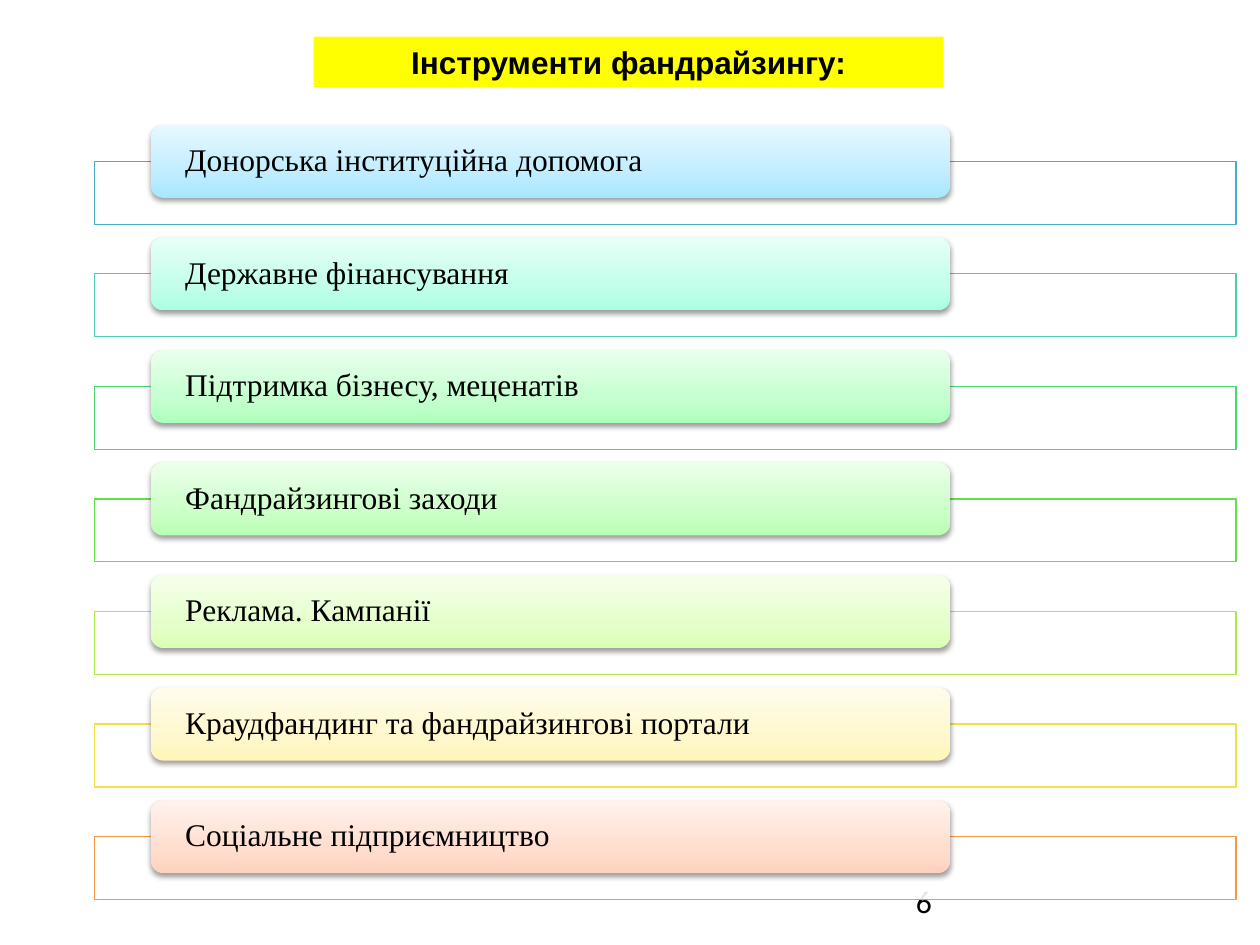
from copy import deepcopy
from dataclasses import dataclass

from lxml.etree import SubElement
from pptx import Presentation
from pptx.dml.color import RGBColor
from pptx.enum.shapes import MSO_SHAPE
from pptx.enum.text import MSO_ANCHOR, MSO_AUTO_SIZE, PP_ALIGN
from pptx.oxml.ns import qn
from pptx.util import Inches, Pt


@dataclass(frozen=True)
class Theme:
    text: str = "000000"
    frame: str = "FFFFFF"
    title_fill: str = "FFFF00"
    title_font: str = "Arial"
    label_font: str = "Times New Roman"
    number_font: str = "Calibri"
    size: int = 18


# Label, frame line, gradient from bottom to top
TOOLS = [
    ("Донорська інституційна допомога", "4BACC6", ("A7E6FF", "C1EDFF", "E7F8FF")),
    ("Державне фінансування", "49CFAE", ("ABFFE3", "C3FFEA", "E8FFF7")),
    ("Підтримка бізнесу, меценатів", "47D872", ("AFFFBD", "C6FFD0", "E9FFED")),
    ("Фандрайзингові заходи", "60E146", ("B9FFB2", "CDFFC9", "ECFFEA")),
    ("Реклама. Кампанії", "ACE946", ("DBFFB6", "E5FFCB", "F5FFEB")),
    ("Краудфандинг та фандрайзингові портали", "F0E146", ("FFF6B9", "FFF8CE", "FFFCEC")),
    ("Соціальне підприємництво", "F79646", ("FFD2BD", "FFDED0", "FFF2ED")),
]
TOP, BOTTOM = 0.99, 6.35  # tops of the first and last pills
STOPS = (0, 0.35, 1)


class Deck:
    def __init__(self, theme):
        self.theme = theme
        self.prs = Presentation()
        self.prs.slide_width, self.prs.slide_height = Inches(10), Inches(7.5)
        self.s = self.prs.slides.add_slide(self.prs.slide_layouts[6])

    def shape(self, kind, x, y, w, h):
        sp = self.s.shapes.add_shape(kind, Inches(x), Inches(y), Inches(w), Inches(h))
        sp.shadow.inherit = False
        sp.line.fill.background()
        return sp

    def set_text(self, sp, text, font, bold=False):
        tf = sp.text_frame
        tf.word_wrap = True
        tf.text = text
        p = tf.paragraphs[0]
        f = p.runs[0].font
        f.name, f.size, f.bold = font, Pt(self.theme.size), bold
        f.color.rgb = RGBColor.from_string(self.theme.text)
        return tf, p

    def text(self, text, x, y, w, h, font):
        sp = self.s.shapes.add_textbox(Inches(x), Inches(y), Inches(w), Inches(h))
        return self.set_text(sp, text, font)

    def title(self, text, x, y, w, h):
        sp = self.shape(MSO_SHAPE.RECTANGLE, x, y, w, h)
        sp.fill.solid()
        sp.fill.fore_color.rgb = RGBColor.from_string(self.theme.title_fill)
        tf, p = self.set_text(sp, text, self.theme.title_font, bold=True)
        tf.auto_size = MSO_AUTO_SIZE.SHAPE_TO_FIT_TEXT
        tf.vertical_anchor = MSO_ANCHOR.TOP
        p.alignment = PP_ALIGN.CENTER

    def frame(self, x, y, w, h, color):
        sp = self.shape(MSO_SHAPE.RECTANGLE, x, y, w, h)
        sp.fill.solid()
        sp.fill.fore_color.rgb = RGBColor.from_string(self.theme.frame)
        fill = sp.element.spPr.find(qn("a:solidFill"))
        SubElement(fill[0], qn("a:alpha"), val="90000")
        sp.line.color.rgb = RGBColor.from_string(color)
        sp.line.width = Pt(0.75)

    def pill(self, x, y, w, h, colors):
        sp = self.shape(MSO_SHAPE.ROUNDED_RECTANGLE, x, y, w, h)
        # Three-stop gradient
        sp.fill.gradient()
        sp.fill.gradient_angle = 90
        stop_list = sp.element.spPr.find(".//" + qn("a:gsLst"))
        stop_list.insert(1, deepcopy(stop_list[0]))
        for stop, position, color in zip(sp.fill.gradient_stops, STOPS, colors):
            stop.position = position
            stop.color.rgb = RGBColor.from_string(color)
        # Soft shadow below
        effects = sp.element.spPr.find(qn("a:effectLst"))
        shadow = SubElement(effects, qn("a:outerShdw"), blurRad=str(Pt(3.1)),
                            dist=str(Pt(1.6)), dir="5400000", rotWithShape="0")
        color = SubElement(shadow, qn("a:srgbClr"), val="000000")
        SubElement(color, qn("a:alpha"), val="38000")

    def label(self, text, x, y, w, h):
        tf, p = self.text(text, x, y, w, h, self.theme.label_font)
        tf.vertical_anchor = MSO_ANCHOR.MIDDLE
        tf.margin_left = tf.margin_right = Inches(0.24)
        tf.margin_top = tf.margin_bottom = 0
        p.line_spacing = 0.9


def main():
    deck = Deck(Theme())

    # Page number and title
    deck.text("6", 7.17, 6.95, 2.33, 0.4, deck.theme.number_font)
    deck.title("Інструменти фандрайзингу:", 2.49, 0.29, 5, 0.4)

    # Evenly spaced rows: frame, pill, label
    pitch = (BOTTOM - TOP) / (len(TOOLS) - 1)
    for i, (name, line, colors) in enumerate(TOOLS):
        y = TOP + i * pitch
        deck.frame(0.75, y + 0.29, 9.06, 0.5, line)
        deck.pill(1.2, y, 6.34, 0.58, colors)
        deck.label(name, 1.23, y + 0.03, 6.28, 0.52)

    deck.prs.save("out.pptx")


if __name__ == "__main__":
    main()
